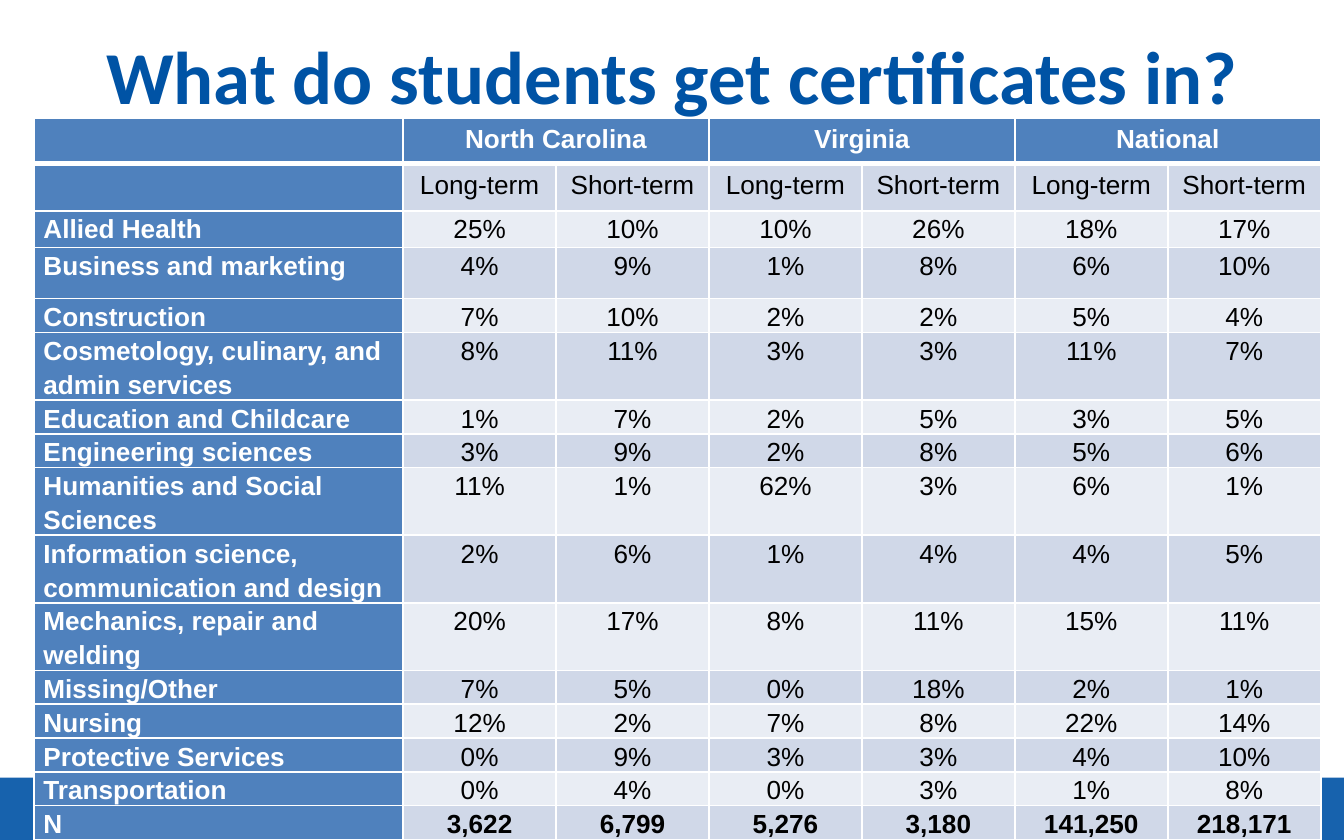
import lxml.etree
import pptx
import pptx.dml.color
import pptx.enum.shapes
import pptx.enum.text
import pptx.oxml.ns
import pptx.util

Cm, Pt = pptx.util.Cm, pptx.util.Pt
RGBColor = pptx.dml.color.RGBColor
ALIGN = pptx.enum.text.PP_ALIGN
qn = pptx.oxml.ns.qn

BRAND_BLUE = RGBColor(0x00, 0x53, 0xA5)
HEADER_BLUE = RGBColor(0x4F, 0x81, 0xBD)
BAND_DARK = RGBColor(0xD0, 0xD8, 0xE8)
BAND_LIGHT = RGBColor(0xE9, 0xED, 0xF4)
WHITE = RGBColor(0xFF, 0xFF, 0xFF)
BLACK = RGBColor(0x00, 0x00, 0x00)

SLIDE_WIDTH, SLIDE_HEIGHT = Cm(25.4), Cm(15.88)
LABEL_WIDTH, VALUE_WIDTH = Cm(6.98), Cm(2.89)
HEADER_HEIGHTS = [0.64, 0.89]

REGIONS = ["North Carolina", "Virginia", "National"]
TERMS = ["Long-term", "Short-term"]
# Field of study, row height in cm, one value per region and term
FIELDS = [
    ("Allied Health", 0.69, "25% 10% 10% 26% 18% 17%"),
    ("Business and marketing", 0.97, "4% 9% 1% 8% 6% 10%"),
    ("Construction", 0.56, "7% 10% 2% 2% 5% 4%"),
    ("Cosmetology, culinary, and admin services", 0.64, "8% 11% 3% 3% 11% 7%"),
    ("Education and Childcare", 0.64, "1% 7% 2% 5% 3% 5%"),
    ("Engineering sciences", 0.64, "3% 9% 2% 8% 5% 6%"),
    ("Humanities and Social Sciences", 0.64, "11% 1% 62% 3% 6% 1%"),
    ("Information science, communication and design", 0.64, "2% 6% 1% 4% 4% 5%"),
    ("Mechanics, repair and welding", 0.64, "20% 17% 8% 11% 15% 11%"),
    ("Missing/Other", 0.64, "7% 5% 0% 18% 2% 1%"),
    ("Nursing", 0.64, "12% 2% 7% 8% 22% 14%"),
    ("Protective Services", 0.58, "0% 9% 3% 3% 4% 10%"),
    ("Transportation", 0.51, "0% 4% 0% 3% 1% 8%"),
    ("N", 0.56, "3,622 6,799 5,276 3,180 141,250 218,171"),
]


def write_text(frame, text, *, font="Arial", size=14, color=BLACK, bold=False,
               align=ALIGN.CENTER, line_spacing=None):
    paragraph = frame.paragraphs[0]
    paragraph.alignment = align
    if line_spacing:
        paragraph.line_spacing = line_spacing
    if not text:
        # An empty paragraph takes its height from the end mark
        lxml.etree.SubElement(paragraph._p, qn("a:endParaRPr"), sz=str(size * 100))
        return
    run = paragraph.add_run()
    run.text = text
    run.font.name = font
    run.font.size = Pt(size)
    run.font.bold = bold
    run.font.color.rgb = color


def add_borders(cell, bottom_width):
    properties = cell._tc.get_or_add_tcPr()
    for side, width in (("L", 1), ("R", 1), ("T", 1), ("B", bottom_width)):
        line = lxml.etree.SubElement(properties, qn(f"a:ln{side}"), w=str(Pt(width)))
        fill = lxml.etree.SubElement(line, qn("a:solidFill"))
        lxml.etree.SubElement(fill, qn("a:srgbClr"), val=str(WHITE))


def fill_cell(cell, text, fill, *, bottom_width=1, compact=False, **text_format):
    """Compact cells have no space above or below their text."""
    add_borders(cell, bottom_width)
    cell.fill.solid()
    cell.fill.fore_color.rgb = fill
    if compact:
        cell.margin_left = cell.margin_right = Cm(0.18)
        cell.margin_top = cell.margin_bottom = 0
        text_format["line_spacing"] = 1.15
    write_text(cell.text_frame, text, **text_format)


def add_footer_bar(slide, left, top, width, height):
    bar = slide.shapes.add_shape(pptx.enum.shapes.MSO_SHAPE.RECTANGLE,
                                 left, top, width, height)
    bar.shadow.inherit = False
    bar.line.fill.background()
    bar.fill.solid()
    bar.fill.fore_color.rgb = BRAND_BLUE
    color = bar._element.spPr.find(f"{qn('a:solidFill')}/{qn('a:srgbClr')}")
    lxml.etree.SubElement(color, qn("a:alpha"), val="91000")


def place_title(slide, left, top, width, height):
    title = slide.shapes.title
    title.left, title.top, title.width, title.height = left, top, width, height
    frame = title.text_frame
    frame.word_wrap = True
    frame.auto_size = pptx.enum.text.MSO_AUTO_SIZE.NONE
    frame.vertical_anchor = pptx.enum.text.MSO_ANCHOR.MIDDLE
    write_text(frame, "What do students get certificates in?",
               font="Calibri", size=40, color=BRAND_BLUE, bold=True)


def add_certificate_table(slide, left, top):
    heights = HEADER_HEIGHTS + [height for _, height, _ in FIELDS]
    value_count = len(REGIONS) * len(TERMS)
    table = slide.shapes.add_table(
        len(heights), value_count + 1, left, top,
        LABEL_WIDTH + value_count * VALUE_WIDTH, Cm(sum(heights))).table
    for row, height in zip(table.rows, heights):
        row.height = Cm(height)
    for index, column in enumerate(table.columns):
        column.width = VALUE_WIDTH if index else LABEL_WIDTH

    fill_cell(table.cell(0, 0), "", HEADER_BLUE, bottom_width=3)
    fill_cell(table.cell(1, 0), "", HEADER_BLUE)
    for index, region in enumerate(REGIONS):
        first = 1 + index * len(TERMS)
        table.cell(0, first).merge(table.cell(0, first + len(TERMS) - 1))
        for offset, term in enumerate(TERMS):
            fill_cell(table.cell(0, first + offset), "" if offset else region,
                      HEADER_BLUE, bottom_width=3, color=WHITE, bold=True)
            fill_cell(table.cell(1, first + offset), term, BAND_DARK)

    for row, (field, _, values) in enumerate(FIELDS, start=len(HEADER_HEIGHTS)):
        fill_cell(table.cell(row, 0), field, HEADER_BLUE, compact=True,
                  color=WHITE, bold=True, align=ALIGN.LEFT)
        band = BAND_DARK if row % 2 else BAND_LIGHT
        is_total = field == "N"
        for column, value in enumerate(values.split(), start=1):
            fill_cell(table.cell(row, column), value,
                      BAND_DARK if is_total else band, compact=True, bold=is_total)


def main():
    deck = pptx.Presentation()
    deck.slide_width, deck.slide_height = SLIDE_WIDTH, SLIDE_HEIGHT
    slide = deck.slides.add_slide(deck.slide_layouts.get_by_name("Title Only"))
    bar_height = Cm(1.18)
    add_footer_bar(slide, 0, SLIDE_HEIGHT - bar_height, SLIDE_WIDTH, bar_height)
    place_title(slide, Cm(1.27), Cm(0.1), Cm(22.86), Cm(2.64))
    add_certificate_table(slide, Cm(0.64), Cm(2.24))
    deck.save("out.pptx")


if __name__ == "__main__":
    main()
